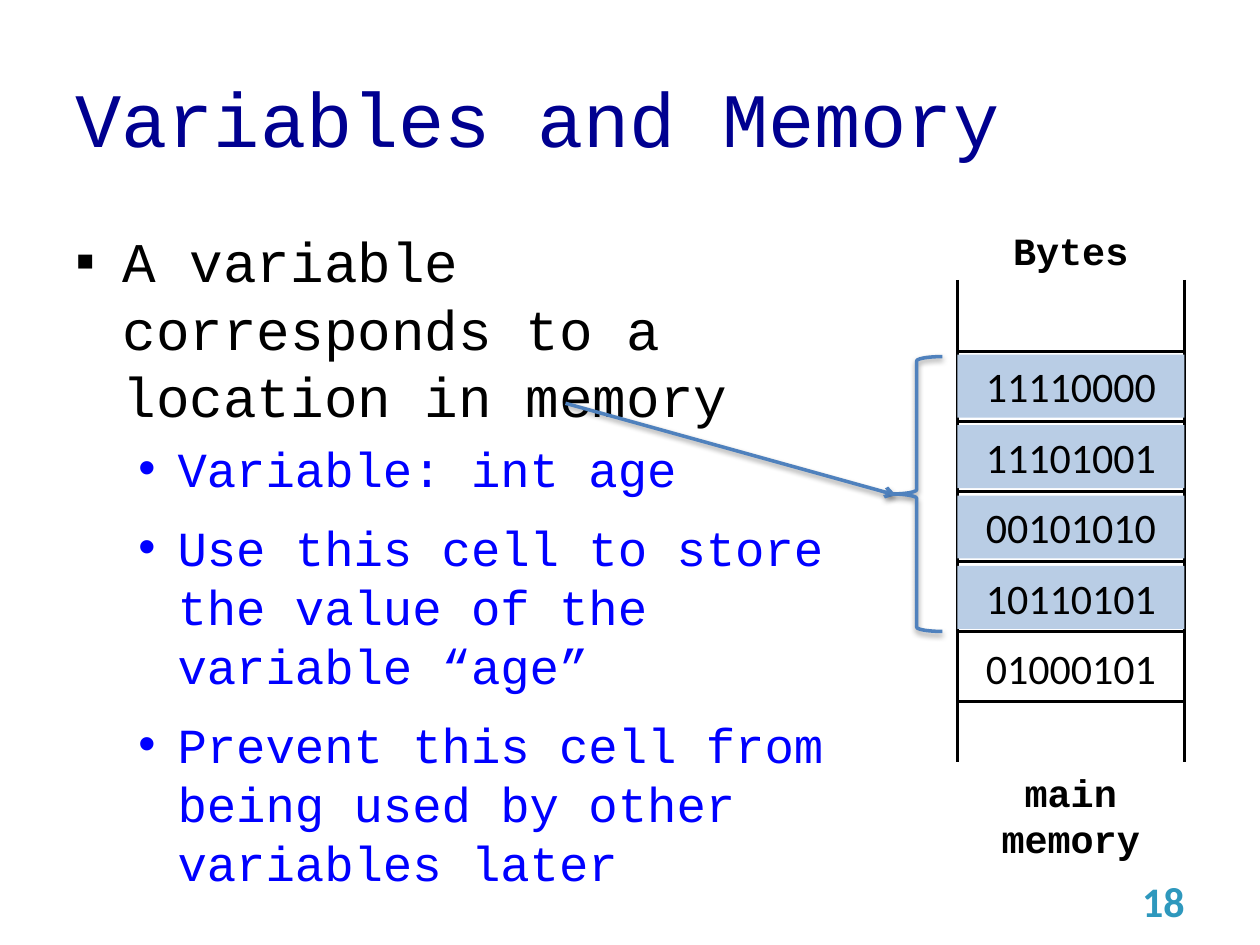
from lxml import etree
from pptx import Presentation
from pptx import util as u
from pptx.dml.color import RGBColor
from pptx.enum import shapes, text
from pptx.oxml import parse_xml
from pptx.oxml.ns import nsdecls, qn

BLACK = RGBColor(0x00, 0x00, 0x00)
NAVY = RGBColor(0x00, 0x00, 0x90)
BLUE = RGBColor(0x00, 0x00, 0xFF)
STEEL = RGBColor(0x4F, 0x81, 0xBD)
PALE_BLUE = RGBColor(0xB9, 0xCD, 0xE5)
TEAL = RGBColor(0x2E, 0x98, 0xBD)
LEFT, CENTER, RIGHT = text.PP_ALIGN.LEFT, text.PP_ALIGN.CENTER, text.PP_ALIGN.RIGHT
TOP, MIDDLE = text.MSO_ANCHOR.TOP, text.MSO_ANCHOR.MIDDLE
SHADOW = (
    f'<a:effectLst {nsdecls("a")}><a:outerShdw blurRad="40000" dist="20000" '
    'dir="5400000" rotWithShape="0"><a:srgbClr val="000000">'
    '<a:alpha val="38000"/></a:srgbClr></a:outerShdw></a:effectLst>'
)

deck = Presentation()
deck.slide_width, deck.slide_height = u.Cm(25.4), u.Cm(19.05)
page = deck.slides.add_slide(deck.slide_layouts[6])


def write(para, words, font, size, color, bold=False, **layout):
    span = para.add_run()
    span.text = words
    span.font.color.rgb = color
    for name, value in {"name": font, "size": u.Pt(size), "bold": bold}.items():
        setattr(span.font, name, value)
    for name, value in layout.items():
        setattr(para, name, value)


def add_line(x1, y1, x2, y2, color, effects):
    line = page.shapes.add_connector(
        shapes.MSO_CONNECTOR.STRAIGHT, u.Cm(x1), u.Cm(y1), u.Cm(x2), u.Cm(y2))
    line.line.color.rgb = color
    line.line.width = u.Pt(2)
    line._element.spPr.append(parse_xml(effects))
    return line


body = page.shapes.add_textbox(u.Cm(1.27), u.Cm(4.45), u.Cm(16.13), u.Cm(12.57))
body.text_frame.word_wrap = True
points = [
    (0, "A variable corresponds to a location in memory"),
    (1, "Variable: int age"),
    (1, "Use this cell to store the value of the variable “age”"),
    (1, "Prevent this cell from being used by other variables later"),
]
levels = [
    {"size": 32, "color": BLACK, "space_before": u.Pt(12.2)},
    {"size": 28, "color": BLUE, "space_before": u.Pt(5.6), "space_after": u.Pt(6)},
]
bullets = [("▪", 0.95, -0.95), ("•", 2.06, -0.79)]
for number, (level, words) in enumerate(points):
    para = body.text_frame.paragraphs[0] if number == 0 else body.text_frame.add_paragraph()
    write(para, words, "Courier New", level=level, **levels[level])
    mark, margin, indent = bullets[level]
    props = para._p.get_or_add_pPr()
    props.set("marL", str(u.Cm(margin)))
    props.set("indent", str(u.Cm(indent)))
    etree.SubElement(props, qn("a:buFont")).set("typeface", "Arial")
    etree.SubElement(props, qn("a:buChar")).set("char", mark)

plain = f'<a:effectLst {nsdecls("a")}/>'
memory_left, memory_right, first_line, row_step = 19.3, 23.88, 7.09, 1.41
for x in (memory_left, memory_right):
    add_line(x, 5.64, x, 15.37, BLACK, plain)
for row in range(6):
    y = first_line + row * row_step
    add_line(memory_left, y, memory_right, y, BLACK, plain)

arrow = add_line(11.4, 8.13, 18.06, 9.98, STEEL, SHADOW)
etree.SubElement(arrow.line._get_or_add_ln(), qn("a:tailEnd")).set("type", "arrow")

cells = ["11110000", "11101001", "00101010", "10110101", "01000101"]
for row, bits in enumerate(cells):
    cell = page.shapes.add_shape(
        shapes.MSO_SHAPE.RECTANGLE, u.Cm(memory_left), u.Cm(7.15 + row * 1.42),
        u.Cm(memory_right - memory_left), u.Cm(1.27))
    cell.shadow.inherit = False
    cell.line.fill.background()
    if row < 4:
        cell.fill.solid()
        cell.fill.fore_color.rgb = PALE_BLUE
    else:
        cell.fill.background()
    cell.text_frame.vertical_anchor = TOP
    write(cell.text_frame.paragraphs[0], bits, "Calibri", 24, BLACK, alignment=CENTER)

labels = [
    ("Variables and Memory", (1.27, 0.76, 22.86, 3.18), MIDDLE, "Courier New", 44, NAVY, False, LEFT),
    ("Bytes", (18.92, 4.45, 5.33, 1.19), TOP, "Courier New", 22, BLACK, True, CENTER),
    ("main memory", (18.92, 15.37, 5.33, 1.19), TOP, "Courier New", 22, BLACK, True, CENTER),
    ("18", (18.21, 17.65, 5.92, 1.02), MIDDLE, "Calibri", 24, TEAL, True, RIGHT),
]
for words, place, anchor, font, size, color, bold, align in labels:
    box = page.shapes.add_textbox(*map(u.Cm, place))
    for name, value in {"word_wrap": True, "vertical_anchor": anchor}.items():
        setattr(box.text_frame, name, value)
    write(box.text_frame.paragraphs[0], words, font, size, color, bold, alignment=align)

brace = page.shapes.add_shape(
    shapes.MSO_SHAPE.LEFT_BRACE, u.Cm(17.96), u.Cm(7.19), u.Cm(1.04), u.Cm(5.54))
brace.fill.background()
brace.line.color.rgb = STEEL
brace.line.width = u.Pt(2)
brace._element.spPr.append(parse_xml(SHADOW))

deck.save("out.pptx")
